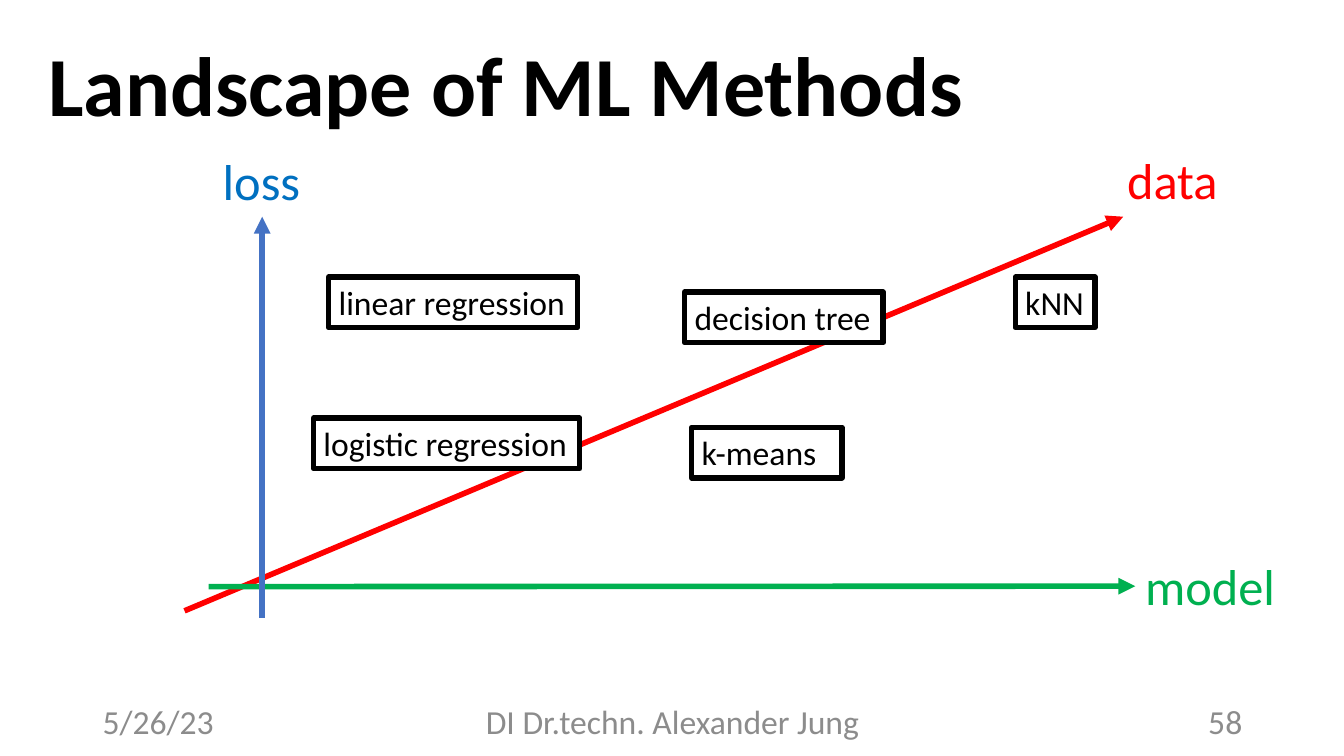
from pptx import Presentation
from pptx.dml.color import RGBColor
from pptx.enum.shapes import MSO_CONNECTOR as Connector, MSO_SHAPE as Shape
from pptx.enum.text import MSO_ANCHOR as Anchor, MSO_AUTO_SIZE as AutoSize, PP_ALIGN as Align
from pptx.oxml.ns import qn
from pptx.util import Inches, Pt
from lxml import etree

COLORS = {
    "black": "000000", "white": "FFFFFF", "gray": "8C8C8C",
    "data": "FF0000", "model": "00B050", "loss": "0070C0", "loss axis": "4472C4",
}
FONT = "Calibri"
LINE_WIDTH = 4
BOX_HEIGHT = 0.5
FOOTER_TOP, FOOTER_HEIGHT = 6.95, 0.4
LABEL_HEIGHT = 0.71

TITLE = "Landscape of ML Methods"

# name, line color, start, end, label (left, top, width), label side joined
AXES = [
    ("data", "data", (1.83, 6.06), (11.14, 2.15), (11.08, 1.43, 1.11), None),
    ("model", "model", (2.07, 5.82), (11.26, 5.82), (11.26, 5.46, 1.5), 1),
    ("loss", "loss axis", (2.6, 6.13), (2.6, 2.15), (2.11, 1.44, 0.98), 2),
]

# text, left, top, width, fill, wrap
METHODS = [
    ("linear regression", 3.26, 2.75, 2.47, None, False),
    ("logistic regression", 3.11, 4.15, 2.64, "white", False),
    ("decision tree", 6.79, 2.9, 1.97, "white", False),
    ("k-means", 6.86, 4.24, 1.49, None, True),
    ("kNN", 10.07, 2.75, 0.79, None, False),
]

# text, left, width, alignment
FOOTERS = [
    ("5/26/23", 0.92, 3, Align.LEFT),
    ("DI Dr.techn. Alexander Jung", 4.42, 4.5, Align.CENTER),
    ("58", 9.42, 3, Align.RIGHT),
]


def rgb(name):
    return RGBColor.from_string(COLORS[name])


def write(box, text, size, color, frame_format, align=Align.LEFT, bold=False, spacing=1.0):
    frame = box.text_frame
    for name, value in frame_format.items():
        setattr(frame, name, value)
    para = frame.paragraphs[0]
    para.alignment = align
    para.line_spacing = spacing
    span = para.add_run()
    span.text = text
    for name, value in {"name": FONT, "size": Pt(size), "bold": bold}.items():
        setattr(span.font, name, value)
    span.font.color.rgb = rgb(color)


def add_text(page, area, *args, **options):
    box = page.shapes.add_textbox(*map(Inches, area))
    write(box, *args, **options)
    return box


def add_axis(page, color, start, end, label, side):
    axis = page.shapes.add_connector(Connector.STRAIGHT, *map(Inches, start + end))
    if side is not None:
        axis.end_connect(label, side)
    axis.line.color.rgb = rgb(color)
    axis.line.width = Pt(LINE_WIDTH)
    etree.SubElement(axis.line._get_or_add_ln(), qn("a:tailEnd"), type="triangle")
    etree.SubElement(axis._element.spPr, qn("a:effectLst"))


def add_method(page, text, left, top, width, fill, wrap):
    box = page.shapes.add_shape(Shape.RECTANGLE, *map(Inches, (left, top, width, BOX_HEIGHT)))
    box.shadow.inherit = False
    if fill:
        box.fill.solid()
        box.fill.fore_color.rgb = rgb(fill)
    else:
        box.fill.background()
    box.line.color.rgb = rgb("black")
    box.line.width = Pt(LINE_WIDTH)
    write(box, text, 24, "black", {**GROWING, "word_wrap": wrap})


GROWING = {"word_wrap": False, "auto_size": AutoSize.SHAPE_TO_FIT_TEXT,
           "vertical_anchor": Anchor.TOP}
FIXED = {"word_wrap": True, "auto_size": AutoSize.NONE, "vertical_anchor": Anchor.MIDDLE}


def main():
    deck = Presentation()
    deck.slide_width, deck.slide_height = Inches(13.33), Inches(7.5)
    page = deck.slides.add_slide(deck.slide_layouts[6])

    # Title
    add_text(page, (0.38, 0.1, 12.95, 1.57), TITLE, 60, "black", FIXED, bold=True, spacing=0.9)

    # Axes with their labels
    for name, color, start, end, place, side in AXES:
        label = add_text(page, (*place, LABEL_HEIGHT), name, 36, name, GROWING)
        add_axis(page, color, start, end, label, side)

    # Method boxes
    for method in METHODS:
        add_method(page, *method)

    # Footer
    for text, left, width, align in FOOTERS:
        add_text(page, (left, FOOTER_TOP, width, FOOTER_HEIGHT), text, 24, "gray", FIXED, align=align)

    deck.save("out.pptx")


if __name__ == "__main__":
    main()
